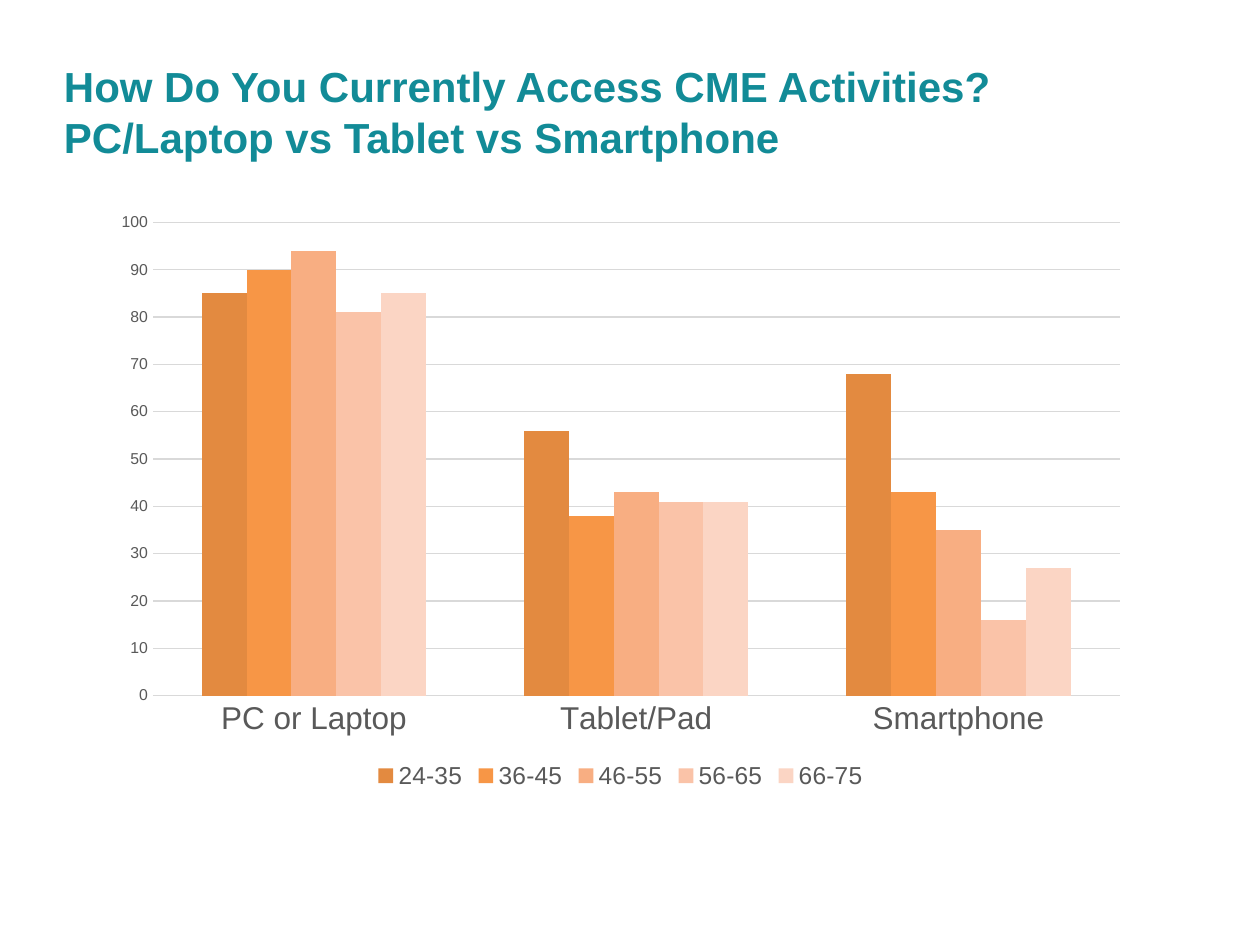
from pptx import Presentation
from pptx.chart.data import CategoryChartData
from pptx.dml.color import RGBColor
from pptx.enum.chart import XL_CHART_TYPE, XL_LEGEND_POSITION, XL_TICK_MARK
from pptx.enum.text import MSO_ANCHOR
from pptx.util import Cm, Pt

COLUMNS = XL_CHART_TYPE.COLUMN_CLUSTERED
BOTTOM = XL_LEGEND_POSITION.BOTTOM
NO_TICK = XL_TICK_MARK.NONE
MIDDLE = MSO_ANCHOR.MIDDLE

FACE = "Arial"
TEAL, GREY, RULE = "128B97", "595959", "D9D9D9"

TITLE = ["How Do You Currently Access CME Activities?",
         "PC/Laptop vs Tablet vs Smartphone"]
DEVICES = ["PC or Laptop", "Tablet/Pad", "Smartphone"]
AGES = [
    ("24-35", (85, 56, 68), "E38A40"),
    ("36-45", (90, 38, 43), "F79646"),
    ("46-55", (94, 43, 35), "F8AE82"),
    ("56-65", (81, 41, 16), "FAC3A8"),
    ("66-75", (85, 41, 27), "FBD5C4"),
]


def color(code):
    return RGBColor.from_string(code)


def apply(target, values):
    for name, value in values.items():
        setattr(target, name, value)


def style(font, size, code, bold=False):
    apply(font, {"name": FACE, "size": Pt(size), "bold": bold})
    font.color.rgb = color(code)


def rule(line):
    line.width = Pt(0.75)
    line.color.rgb = color(RULE)


def add_title(slide, lines, box):
    frame = slide.shapes.add_textbox(*box).text_frame
    apply(frame, {"word_wrap": True, "vertical_anchor": MIDDLE})
    # A vertical tab makes a line break within the paragraph
    frame.text = "\v".join(lines)
    for run in frame.paragraphs[0].runs:
        style(run.font, 24, TEAL, bold=True)


def add_columns(slide, box):
    data = CategoryChartData()
    data.categories = DEVICES
    for age, shares, _ in AGES:
        data.add_series(age, shares)
    chart = slide.shapes.add_chart(COLUMNS, *box, data).chart
    apply(chart, {"has_title": False, "has_legend": True})
    style(chart.font, 10, "000000")

    # Columns
    plot = chart.plots[0]
    apply(plot, {"gap_width": 219, "overlap": 0, "vary_by_categories": False})
    for series, (_, _, code) in zip(plot.series, AGES):
        series.format.fill.solid()
        series.format.fill.fore_color.rgb = color(code)

    # Axes
    across, up = chart.category_axis, chart.value_axis
    for axis, size in ((across, 18), (up, 9)):
        apply(axis, {"major_tick_mark": NO_TICK, "minor_tick_mark": NO_TICK})
        style(axis.tick_labels.font, size, GREY)
    apply(up, {"minimum_scale": 0, "maximum_scale": 100, "major_unit": 10,
               "has_major_gridlines": True})
    up.format.line.fill.background()
    rule(across.format.line)
    rule(up.major_gridlines.format.line)

    # Legend
    apply(chart.legend, {"position": BOTTOM, "include_in_layout": False})
    style(chart.legend.font, 14, GREY)


def main():
    deck = Presentation()
    apply(deck, {"slide_width": Cm(25.4), "slide_height": Cm(19.05)})
    slide = deck.slides.add_slide(deck.slide_layouts[6])
    add_title(slide, TITLE, (Cm(1.04), Cm(0.79), Cm(23.27), Cm(2.9)))
    add_columns(slide, (Cm(2.03), Cm(4.06), Cm(20.96), Cm(11.96)))
    deck.save("out.pptx")


if __name__ == "__main__":
    main()
